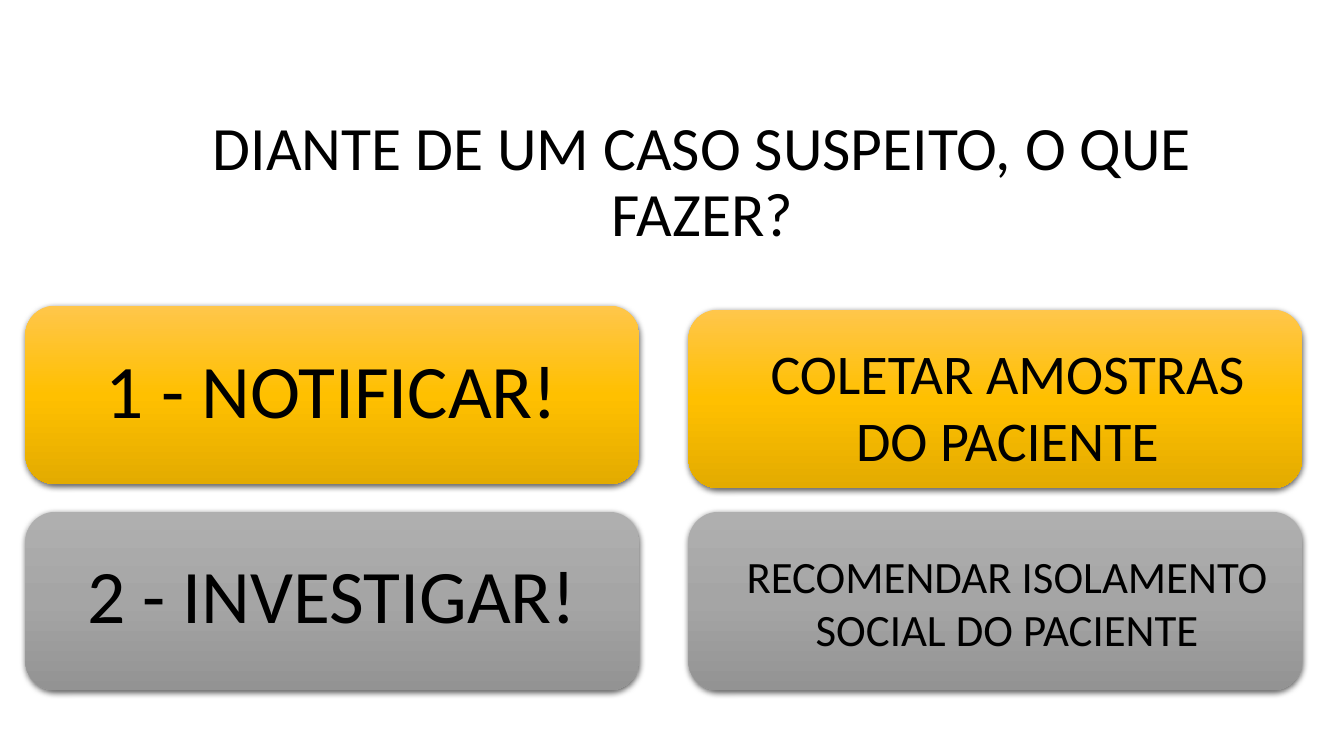
"""Build the slide on what to do with a suspected case."""
from copy import deepcopy
from lxml.etree import fromstring
from pptx import Presentation
from pptx.dml.color import RGBColor
from pptx.enum.shapes import MSO_SHAPE as Shape
from pptx.enum.text import MSO_ANCHOR as Anchor, PP_ALIGN as Align
from pptx.oxml.ns import qn
from pptx.util import Cm, Pt

SHADE = (
    '<a:outerShdw xmlns:a="http://schemas.openxmlformats.org/drawingml/2006/main"'
    ' blurRad="57150" dist="19050" dir="5400000" algn="ctr" rotWithShape="0">'
    '<a:srgbClr val="000000"><a:alpha val="63000"/></a:srgbClr></a:outerShdw>'
)
GOLD = ("FFC64B", "FFC000", "E3AB00")
GRAY = ("AFAFAF", "A5A5A5", "939393")


def paint(color, code):
    color.rgb = RGBColor.from_string(code)


def write(text, size, place, wrap=True):
    box = slide.shapes.add_textbox(*map(Cm, place))
    frame = box.text_frame
    frame.text = text
    frame.word_wrap = wrap
    line = frame.paragraphs[0]
    line.alignment = Align.CENTER
    font = line.runs[0].font
    font.name = "Calibri"
    font.size = Pt(size)
    paint(font.color, "000000")
    return frame


deck = Presentation()
deck.slide_width = Cm(33.87)
deck.slide_height = Cm(19.05)
slide = deck.slides.add_slide(deck.slide_layouts[6])

title = write("DIANTE DE UM CASO SUSPEITO, O QUE FAZER?", 44, (3.1, 2.79, 29.21, 3.68))
title.vertical_anchor = Anchor.MIDDLE
title.paragraphs[0].line_spacing = 0.9

cards = [
    (0.64, 7.7, GOLD, "1 - NOTIFICAR!", 54, (2.36, 8.51, 12.01, 2.57), False),
    (0.64, 12.9, GRAY, "2 - INVESTIGAR!", 54, (1.88, 13.69, 12.98, 2.57), False),
    (17.35, 7.8, GOLD, "COLETAR AMOSTRAS DO PACIENTE", 40, (18.47, 8.41, 13.84, 3.68), True),
    (17.35, 12.9, GRAY, "RECOMENDAR ISOLAMENTO SOCIAL DO PACIENTE", 32,
     (17.65, 13.69, 15.47, 3), True),
]
for left, top, tones, text, size, place, wrap in cards:
    card = slide.shapes.add_shape(
        Shape.ROUNDED_RECTANGLE, Cm(left), Cm(top), Cm(15.47), Cm(4.5))
    card.line.fill.background()
    card.fill.gradient()
    card.fill.gradient_angle = 270
    props = card._element.spPr
    stops = props.find(".//" + qn("a:gsLst"))
    stops.append(deepcopy(stops[0]))
    for stop, tone, spot in zip(card.fill.gradient_stops, tones, (0, 0.5, 1)):
        stop.position = spot
        paint(stop.color, tone)
    card.shadow.inherit = False
    props.find(qn("a:effectLst")).append(fromstring(SHADE))
    write(text, size, place, wrap)

deck.save("out.pptx")
